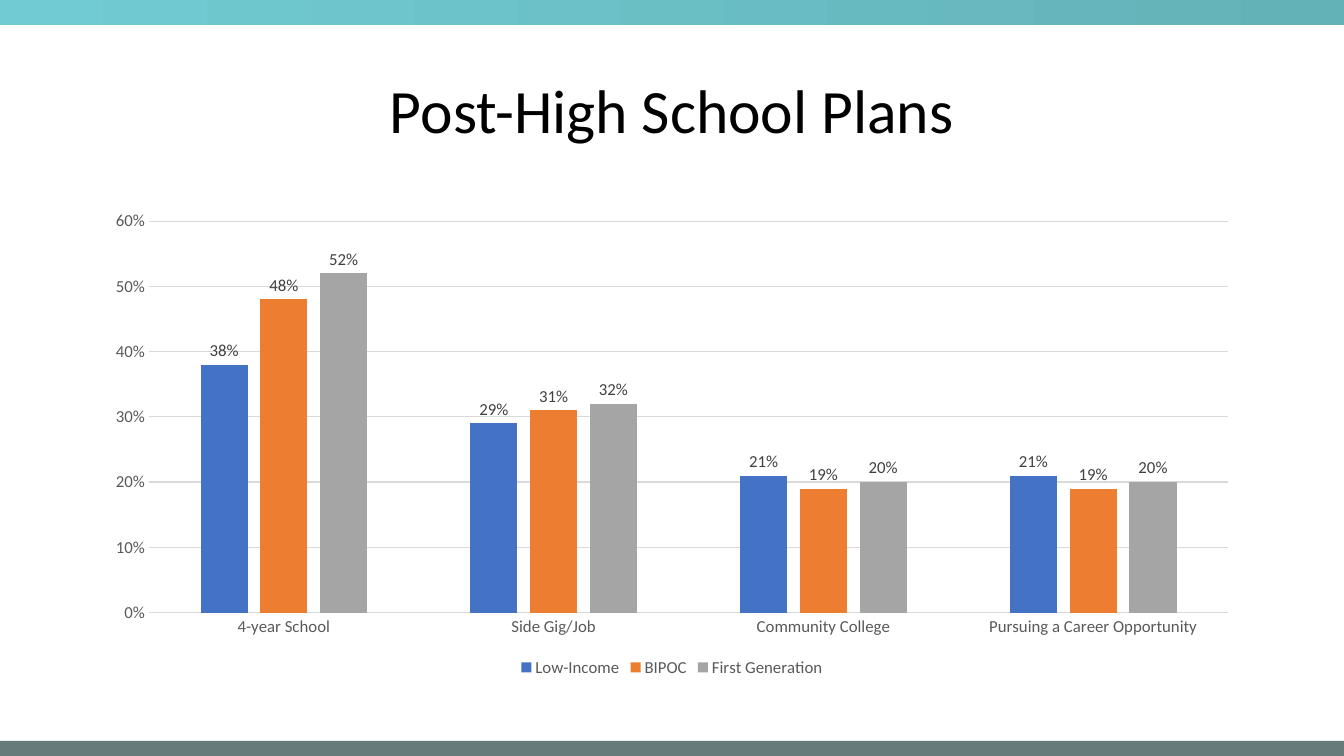
from pptx import Presentation
from pptx.chart.data import CategoryChartData
from pptx.dml.color import RGBColor
from pptx.enum.chart import XL_CHART_TYPE, XL_LABEL_POSITION, XL_LEGEND_POSITION, XL_TICK_MARK
from pptx.enum.shapes import MSO_SHAPE
from pptx.enum.text import MSO_ANCHOR, PP_ALIGN
from pptx.util import Inches, Pt

COLUMN = XL_CHART_TYPE.COLUMN_CLUSTERED
OUTSIDE = XL_LABEL_POSITION.OUTSIDE_END
BOTTOM = XL_LEGEND_POSITION.BOTTOM
NO_TICK = XL_TICK_MARK.NONE
RECT = MSO_SHAPE.RECTANGLE
MIDDLE = MSO_ANCHOR.MIDDLE
CENTER = PP_ALIGN.CENTER

WIDE, HIGH = 13.33, 7.5
EDGE = 0.92
FACE = "Calibri"
COLORS = {
    "black": "000000", "text": "595959", "label": "404040", "grid": "D9D9D9",
    "aqua": "71CBD2", "teal": "63B2B8", "slate": "667B7A",
    "blue": "4472C4", "orange": "ED7D31", "gray": "A5A5A5",
}
PLANS = ["4-year School", "Side Gig/Job", "Community College", "Pursuing a Career Opportunity"]
GROUPS = [
    ("Low-Income", "blue", [0.38, 0.29, 0.21, 0.21]),
    ("BIPOC", "orange", [0.48, 0.31, 0.19, 0.19]),
    ("First Generation", "gray", [0.52, 0.32, 0.2, 0.2]),
]


def color(name):
    """Return the named colour."""
    return RGBColor.from_string(COLORS[name])


def setup(item, **values):
    """Set each given attribute on an item."""
    for name, value in values.items():
        setattr(item, name, value)


def style(font, size, name):
    """Format a font."""
    setup(font, name=FACE, size=Pt(size), bold=False)
    font.color.rgb = color(name)


def rule(line):
    """Format a thin chart line."""
    line.width = Pt(0.75)
    line.color.rgb = color("grid")


def add_band(slide, box, *names):
    """Draw a band in one colour or a gradient of two."""
    band = slide.shapes.add_shape(RECT, *map(Inches, box))
    band.shadow.inherit = False
    band.line.fill.background()
    if len(names) == 1:
        band.fill.solid()
        band.fill.fore_color.rgb = color(names[0])
        return
    band.fill.gradient()
    band.fill.gradient_angle = 0
    for stop, name, place in zip(band.fill.gradient_stops, names, (0, 1)):
        stop.color.rgb = color(name)
        stop.position = place


def add_title(slide, box, text):
    """Place and format the slide title."""
    title = slide.shapes.title
    left, top, width, height = map(Inches, box)
    setup(title, left=left, top=top, width=width, height=height)
    frame = title.text_frame
    setup(frame, text=text, vertical_anchor=MIDDLE, word_wrap=True)
    para = frame.paragraphs[0]
    setup(para, alignment=CENTER, line_spacing=0.9)
    style(para.runs[0].font, 44, "black")


def add_plot(slide, box):
    """Place the column chart of plans by group."""
    data = CategoryChartData(number_format="0%")
    data.categories = PLANS
    for name, _, values in GROUPS:
        data.add_series(name, values)
    chart = slide.shapes.add_chart(COLUMN, *map(Inches, box), data).chart
    setup(chart, has_title=False, has_legend=True)
    style(chart.font, 10, "black")
    setup(chart.legend, position=BOTTOM, include_in_layout=False)
    style(chart.legend.font, 12, "text")
    for axis in (chart.category_axis, chart.value_axis):
        setup(axis, major_tick_mark=NO_TICK, minor_tick_mark=NO_TICK)
        style(axis.tick_labels.font, 12, "text")
    rule(chart.category_axis.format.line)
    scale = chart.value_axis
    setup(scale, minimum_scale=0, maximum_scale=0.6, major_unit=0.1, has_major_gridlines=True)
    setup(scale.tick_labels, number_format="0%", number_format_is_linked=False)
    scale.format.line.fill.background()
    rule(scale.major_gridlines.format.line)
    plot = chart.plots[0]
    setup(plot, gap_width=219, overlap=-27, vary_by_categories=False)
    for series, (_, name, _) in zip(plot.series, GROUPS):
        series.format.fill.solid()
        series.format.fill.fore_color.rgb = color(name)
        labels = series.data_labels
        setup(labels, show_value=True, position=OUTSIDE,
              number_format="0%", number_format_is_linked=False)
        style(labels.font, 12, "label")


def main():
    """Build and save the slide."""
    deck = Presentation()
    setup(deck, slide_width=Inches(WIDE), slide_height=Inches(HIGH))
    slide = deck.slides.add_slide(deck.slide_layouts[5])
    inner = WIDE - 2 * EDGE
    add_band(slide, (0, -0.01, WIDE, 0.26), "aqua", "teal")
    add_band(slide, (0, 7.35, WIDE, 0.15), "slate")
    add_title(slide, (EDGE, 0.4, inner, 1.45), "Post-High School Plans")
    add_plot(slide, (EDGE, 2, inner, 4.76))
    deck.save("out.pptx")


if __name__ == "__main__":
    main()
